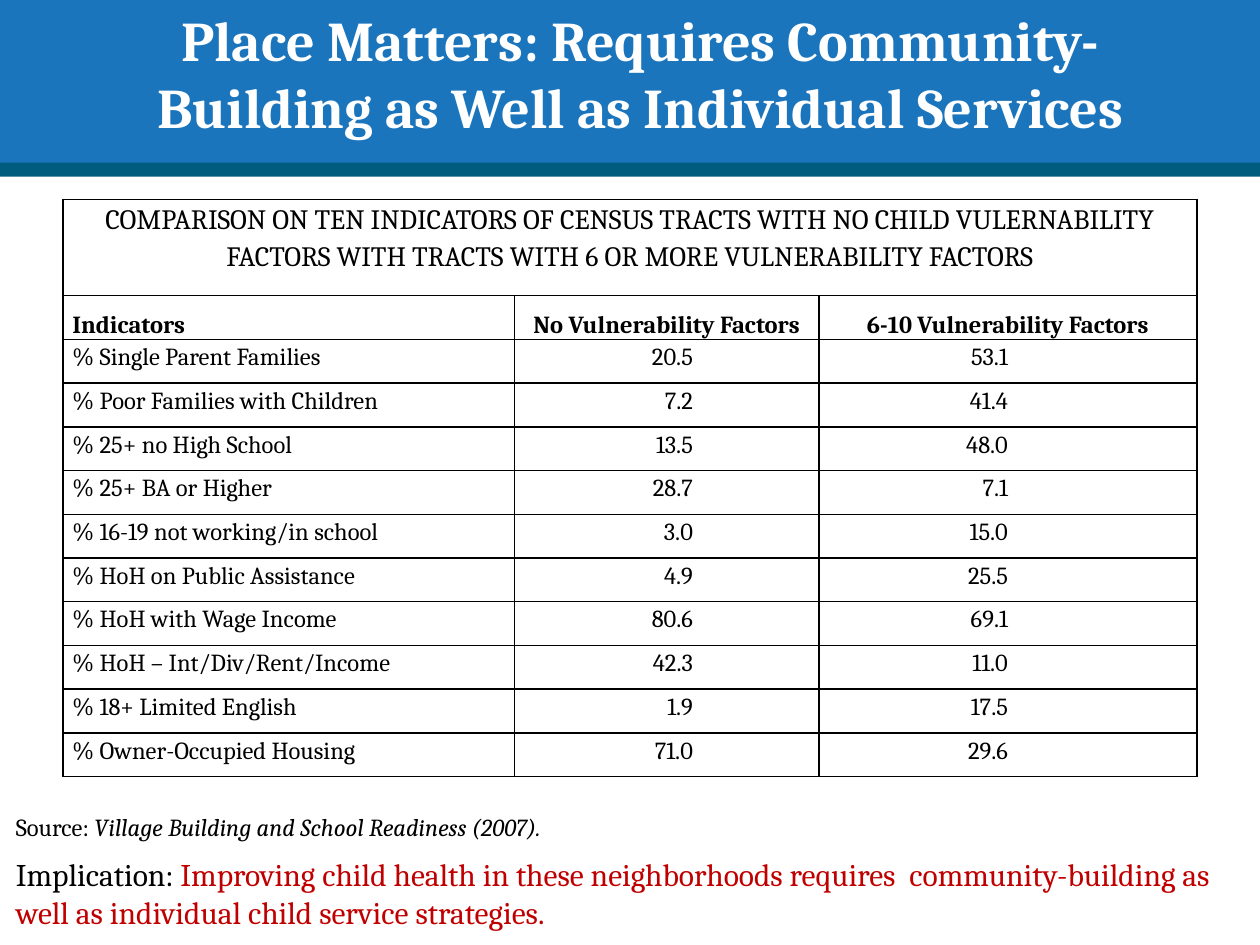
"""Build the slide comparing census tracts by child vulnerability factors."""
from lxml.etree import SubElement
from pptx import Presentation
from pptx.dml.color import RGBColor
from pptx.enum.shapes import MSO_SHAPE
from pptx.enum.text import MSO_ANCHOR, MSO_AUTO_SIZE, PP_ALIGN
from pptx.oxml.ns import qn
from pptx.util import Pt

WHITE = RGBColor(0xFF, 0xFF, 0xFF)
BLACK = RGBColor(0x00, 0x00, 0x00)
BLUE = RGBColor(0x1B, 0x75, 0xBC)
TEAL = RGBColor(0x00, 0x5C, 0x7E)
RED = RGBColor(0xC0, 0x00, 0x00)

HEADING = (
    "COMPARISON ON TEN INDICATORS OF CENSUS TRACTS WITH NO CHILD VULERNABILITY "
    "FACTORS WITH TRACTS WITH 6 OR MORE VULNERABILITY FACTORS"
)
COLUMN_TITLES = ("Indicators", "No Vulnerability Factors", "6-10 Vulnerability Factors")
INDICATORS = (
    ("% Single Parent Families", "20.5", "53.1"),
    ("% Poor Families with Children", "7.2", "41.4"),
    ("% 25+ no High School", "13.5", "48.0"),
    ("% 25+ BA or Higher", "28.7", "7.1"),
    ("% 16-19 not working/in school", "3.0", "15.0"),
    ("% HoH on Public Assistance", "4.9", "25.5"),
    ("% HoH with Wage Income", "80.6", "69.1"),
    ("% HoH – Int/Div/Rent/Income", "42.3", "11.0"),
    ("% 18+ Limited English", "1.9", "17.5"),
    ("% Owner-Occupied Housing", "71.0", "29.6"),
)


def write(paragraph, text, size=14, color=BLACK, bold=False, italic=False,
          align=PP_ALIGN.LEFT, line_spacing=1.0, space_before=0):
    paragraph.alignment = align
    paragraph.line_spacing = line_spacing
    paragraph.space_before = Pt(space_before)
    run = paragraph.add_run()
    run.text = text
    run.font.name = "Cambria"
    run.font.size = Pt(size)
    run.font.bold = bold
    run.font.italic = italic
    run.font.color.rgb = color


def add_block(slide, left, top, width, height, color):
    block = slide.shapes.add_shape(
        MSO_SHAPE.RECTANGLE, Pt(left), Pt(top), Pt(width), Pt(height))
    block.shadow.inherit = False
    block.fill.solid()
    block.fill.fore_color.rgb = color
    block.line.fill.background()
    return block


presentation = Presentation()
presentation.slide_width, presentation.slide_height = Pt(720), Pt(540)
slide = presentation.slides.add_slide(presentation.slide_layouts[5])

add_block(slide, 0, 0, 720, 96, BLUE)
add_block(slide, 0, 93, 720, 8, TEAL)

title = slide.shapes.title
title.left, title.top, title.width, title.height = Pt(42), Pt(0), Pt(648), Pt(78)
slide.shapes._spTree.append(title._element)

conclusion = add_block(slide, 6, 462, 702, 72, WHITE)
for frame in (title.text_frame, conclusion.text_frame):
    frame.word_wrap = True
    frame.auto_size = MSO_AUTO_SIZE.NONE
    frame.margin_left = frame.margin_right = Pt(3)
    frame.margin_top = frame.margin_bottom = Pt(3)

title.text_frame.vertical_anchor = MSO_ANCHOR.TOP
write(title.text_frame.paragraphs[0],
      "Place Matters: Requires Community-Building as Well as Individual Services",
      size=32, color=WHITE, bold=True, align=PP_ALIGN.CENTER)

conclusion.text_frame.vertical_anchor = MSO_ANCHOR.MIDDLE
source = conclusion.text_frame.paragraphs[0]
write(source, "Source: ", space_before=8)
write(source, "Village Building and School Readiness (2007).", italic=True, space_before=8)
implication = conclusion.text_frame.add_paragraph()
write(implication, "Implication: ", size=18, space_before=8)
write(implication,
      "Improving child health in these neighborhoods requires  community-building "
      "as well as individual child service strategies.",
      size=18, color=RED, space_before=8)

rows = [(HEADING, "", ""), COLUMN_TITLES, *INDICATORS]
row_heights = [55] + [25] * (len(rows) - 1)
comparison = slide.shapes.add_table(
    len(rows), 3, Pt(36), Pt(114), Pt(648), Pt(sum(row_heights))).table
comparison.first_row = False
comparison.horz_banding = False
for column, width in zip(comparison.columns, (258, 174, 216)):
    column.width = Pt(width)
for row, height in zip(comparison.rows, row_heights):
    row.height = Pt(height)
comparison.cell(0, 0).merge(comparison.cell(0, 2))

for row_index, values in enumerate(rows):
    for column_index, value in enumerate(values):
        cell = comparison.cell(row_index, column_index)
        is_number = row_index > 1 and column_index > 0
        cell.margin_left = Pt(5.4)
        cell.margin_right = Pt((5.4, 72, 108)[column_index] if is_number else 5.4)
        cell.margin_top = cell.margin_bottom = Pt(0)
        cell.vertical_anchor = MSO_ANCHOR.BOTTOM if row_index == 1 else MSO_ANCHOR.TOP
        properties = cell._tc.get_or_add_tcPr()
        for side in ("a:lnL", "a:lnR", "a:lnT", "a:lnB"):
            border = SubElement(properties, qn(side), w=str(Pt(1)))
            border_fill = SubElement(border, qn("a:solidFill"))
            SubElement(border_fill, qn("a:srgbClr"), val=str(BLACK))
        cell.fill.solid()
        cell.fill.fore_color.rgb = WHITE
        if is_number:
            align = PP_ALIGN.RIGHT
        elif row_index == 0 or column_index > 0:
            align = PP_ALIGN.CENTER
        else:
            align = PP_ALIGN.LEFT
        if value:
            write(cell.text_frame.paragraphs[0], value, size=16 if row_index == 0 else 14,
                  bold=row_index == 1, align=align, line_spacing=1.15)

presentation.save("out.pptx")
